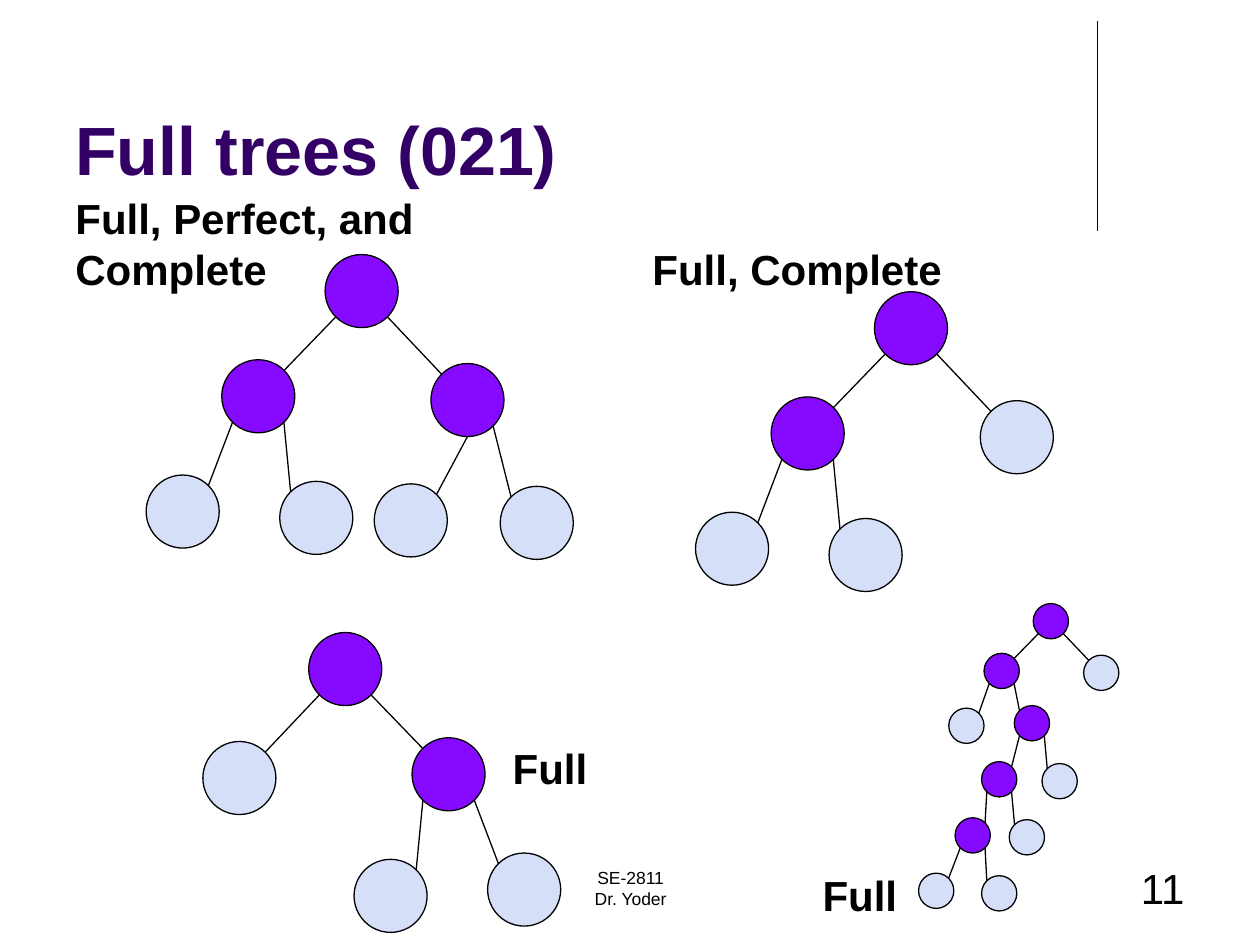
from lxml import etree
from pptx import Presentation, util as u
from pptx.dml.color import RGBColor
from pptx.enum import shapes, text
from pptx.oxml.ns import qn

INK = RGBColor(0x00, 0x00, 0x00)
PLUM = RGBColor(0x33, 0x00, 0x66)
INNER = RGBColor(0x85, 0x0A, 0xFF)
LEAF = RGBColor(0xD5, 0xDF, 0xF7)

# The slide is a grid of 100 columns by 75 rows
COLS, ROWS = 100, 75
CELL = u.Inches(0.1)

deck = Presentation()
deck.slide_width, deck.slide_height = COLS * CELL, ROWS * CELL
slide = deck.slides.add_slide(deck.slide_layouts[6])


def grid(*vals):
    return [u.Emu(round(v * CELL)) for v in vals]


def link(x1, y1, x2, y2):
    line = slide.shapes.add_connector(
        shapes.MSO_CONNECTOR.STRAIGHT, *grid(x1, y1, x2, y2))
    line.line.color.rgb = INK
    line.line.width = u.Pt(0.75)
    etree.SubElement(line._element.spPr, qn("a:effectLst"))


# Rule at the top right
link(87.1, 1.7, 87.1, 18.3)

# Title, headings, footer and page number
LEFT, MID, RIGHT = text.PP_ALIGN.LEFT, text.PP_ALIGN.CENTER, text.PP_ALIGN.RIGHT
TOP, LOW = text.MSO_ANCHOR.TOP, text.MSO_ANCHOR.BOTTOM
title = {"size": u.Pt(39), "bold": True, "name": "Arial"}
head = {**title, "size": u.Pt(24)}
foot = {"size": u.Pt(10), "name": "Arial"}
page = {**foot, "size": u.Pt(24)}

labels = [
    (["Full trees (021)"], (5, 3, 90, 12.5), title, PLUM, LEFT, LOW),
    (["Full, Perfect, and Complete"], (5, 16.8, 44.2, 7), head, INK, LEFT, LOW),
    (["Full, Complete"], (50.8, 16.8, 44.2, 7), head, INK, LEFT, LOW),
    (["Full"], (39.7, 56.4, 44.2, 7), head, INK, LEFT, LOW),
    (["Full"], (64.3, 66.5, 44.2, 7), head, INK, LEFT, LOW),
    (["SE-2811", "Dr. Yoder"], (34.2, 68.3, 31.7, 5), foot, INK, MID, TOP),
    (["11"], (71.7, 68, 23.3, 5), page, INK, RIGHT, TOP),
]
for rows, area, style, tint, align, anchor in labels:
    frame = slide.shapes.add_textbox(*grid(*area)).text_frame
    frame.word_wrap = True
    frame.vertical_anchor = anchor
    frame.text = "\n".join(rows)
    for para in frame.paragraphs:
        para.alignment = align
        for key, val in style.items():
            setattr(para.font, key, val)
        para.font.color.rgb = tint

# Nodes are keyed by their route from the root, L or R at each step,
# and placed by their offset from the root
half = {"": (0, 0), "L": (-8.2, 8.35), "R": (8.4, 8.65),
        "LL": (-14.2, 17.5), "LR": (-3.6, 18)}
full = {**half, "RL": (3.9, 18.2), "RR": (13.9, 18.4)}
swap = str.maketrans("LR", "RL")
flip = {key.translate(swap): (-x, y) for key, (x, y) in half.items()}
deep = {"": (0, 0), "L": (-3.9, 3.95), "R": (4, 4.1),
        "LL": (-6.7, 8.3), "LR": (-1.5, 8.1),
        "LRL": (-4.1, 12.55), "LRR": (0.7, 12.7),
        "LRLL": (-6.2, 17), "LRLR": (-1.9, 17.15),
        "LRLLL": (-9.1, 21.4), "LRLLR": (-4.1, 21.6)}

# Links meet the circles on their diagonals
NEAR, FAR = 0.15, 0.85

# Each tree: nodes, root column and row, circle size, routes linked from mid-base
trees = [(full, 25.8, 20.2, 5.8, ["RL"]), (half, 69.4, 23.15, 5.8, []),
         (deep, 82, 47.9, 2.8, []), (flip, 24.5, 50.2, 5.8, [])]
for nodes, left, top, size, base in trees:
    for key, (x, y) in nodes.items():
        x, y = left + x, top + y
        dot = slide.shapes.add_shape(
            shapes.MSO_SHAPE.OVAL, *grid(x, y, size, size))
        dot.shadow.inherit = False
        dot.fill.solid()
        dot.fill.fore_color.rgb = INNER if key + "L" in nodes else LEAF
        dot.line.color.rgb = INK
        dot.line.width = u.Pt(0.75)
        if key:
            px, py = nodes[key[:-1]]
            out, into = (NEAR, FAR) if key[-1] == "L" else (FAR, NEAR)
            drop = FAR
            if key in base:
                out, drop = 0.5, 1
            link(left + px + out * size, top + py + drop * size,
                 x + into * size, y + NEAR * size)

deck.save("out.pptx")
